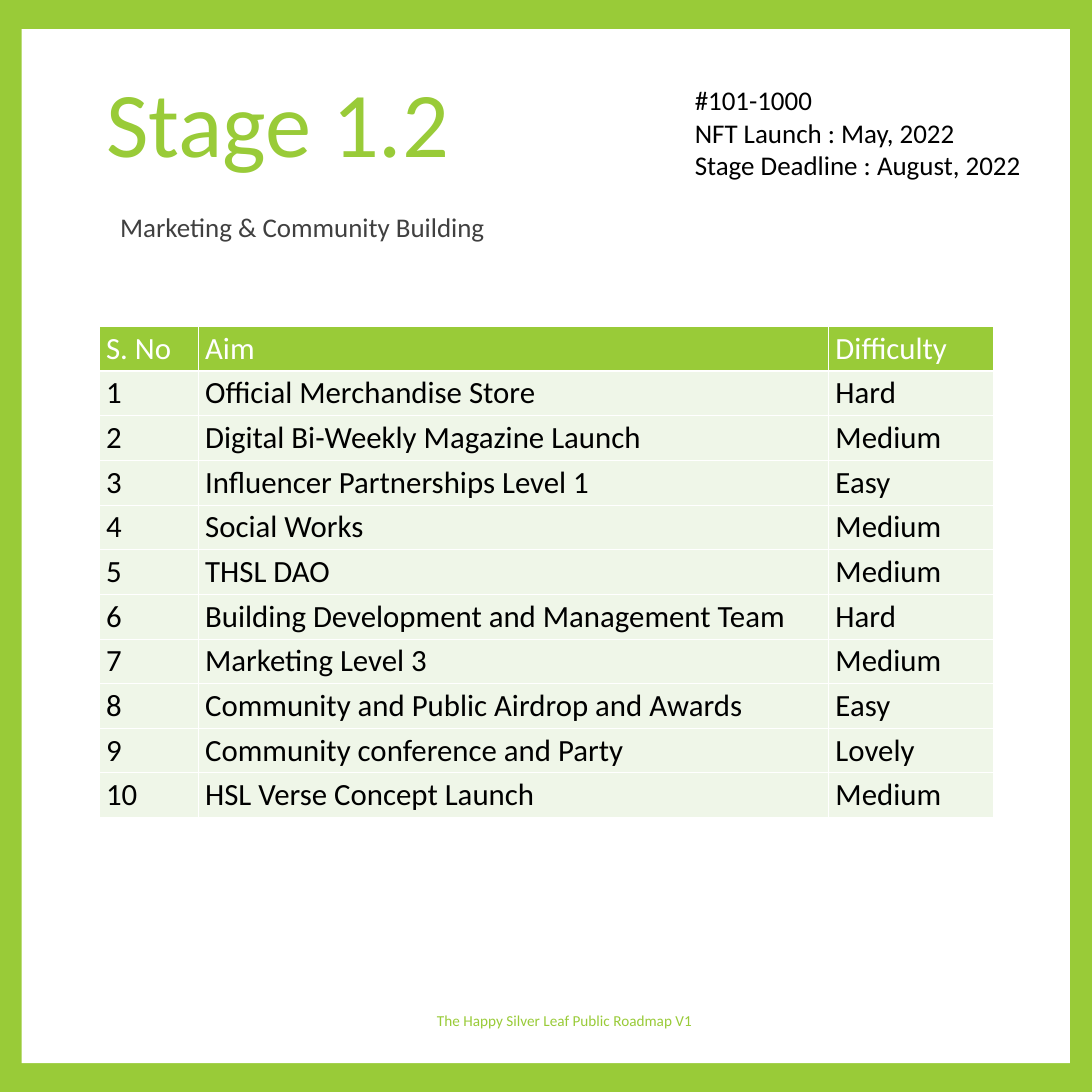
"""Build the Stage 1.2 roadmap slide with its table of aims."""
from dataclasses import dataclass

from lxml.etree import SubElement
from pptx import Presentation
from pptx.dml.color import RGBColor
from pptx.enum.shapes import MSO_SHAPE
from pptx.enum.text import MSO_ANCHOR as Anchor, MSO_AUTO_SIZE as AutoSize, PP_ALIGN as Align
from pptx.oxml.ns import qn
from pptx.util import Cm, Pt

GREEN, PALE, WHITE, BLACK, GREY = "99CB38", "EFF6E8", "FFFFFF", "000000", "404040"
LEFT = 3.63
ROW_HEIGHT = 1.6
COLUMN_WIDTHS = (3.63, 23.09, 6.05)
HEADER = ("S. No", "Aim", "Difficulty")


@dataclass(frozen=True)
class Aim:
    name: str
    difficulty: str


@dataclass(frozen=True)
class Caption:
    lines: tuple[str, ...]
    box: tuple[float, float, float, float]
    size: float
    color: str
    align: Align = Align.LEFT
    anchor: Anchor = Anchor.TOP
    fit: AutoSize = AutoSize.SHAPE_TO_FIT_TEXT
    spacing: float = 1.0


AIMS = (
    Aim("Official Merchandise Store", "Hard"),
    Aim("Digital Bi-Weekly Magazine Launch", "Medium"),
    Aim("Influencer Partnerships Level 1", "Easy"),
    Aim("Social Works", "Medium"),
    Aim("THSL DAO", "Medium"),
    Aim("Building Development and Management Team", "Hard"),
    Aim("Marketing Level 3", "Medium"),
    Aim("Community and Public Airdrop and Awards", "Easy"),
    Aim("Community conference and Party", "Lovely"),
    Aim("HSL Verse Concept Launch", "Medium"),
)

STAGE = Caption(("Stage 1.2",), (LEFT, 3.96, 27.43, 1.4), 96, GREEN,
                anchor=Anchor.MIDDLE, fit=AutoSize.NONE, spacing=0.9)
CAPTIONS = (
    Caption(("The Happy Silver Leaf Public Roadmap V1",), (12.95, 36.3, 15.47, 2.13), 15.8,
            GREEN, Align.CENTER, Anchor.MIDDLE, AutoSize.NONE),
    Caption(("#101-1000", "NFT Launch : May, 2022", "Stage Deadline : August, 2022"),
            (25.2, 2.95, 13.61, 3.84), 28, BLACK),
    Caption(("Marketing & Community Building",), (LEFT, 7.57, 14.88, 1.45), 28, GREY, Align.CENTER),
)


def paint(fill, color: str) -> None:
    fill.solid()
    fill.fore_color.rgb = RGBColor.from_string(color)


def set_font(font, size: float, color: str) -> None:
    for key, value in {"name": "Calibri", "size": Pt(size), "bold": False}.items():
        setattr(font, key, value)
    paint(font.fill, color)


def write(shape, caption: Caption) -> None:
    for side, length in zip(("left", "top", "width", "height"), caption.box):
        setattr(shape, side, Cm(length))
    frame = shape.text_frame
    frame.text = "\n".join(caption.lines)
    frame_format = {"word_wrap": True, "auto_size": caption.fit, "vertical_anchor": caption.anchor}
    for key, value in frame_format.items():
        setattr(frame, key, value)
    for paragraph in frame.paragraphs:
        paragraph.alignment = caption.align
        paragraph.line_spacing = caption.spacing
        set_font(paragraph.runs[0].font, caption.size, caption.color)


def add_borders(cell, bottom: float) -> None:
    properties = cell._tc.get_or_add_tcPr()
    for side, width in {"lnL": 1, "lnR": 1, "lnT": 1, "lnB": bottom}.items():
        line = SubElement(properties, qn(f"a:{side}"), w=str(Pt(width)))
        SubElement(SubElement(line, qn("a:solidFill")), qn("a:srgbClr"), val=WHITE)


def add_aims(slide) -> None:
    rows = [HEADER] + [(str(i), aim.name, aim.difficulty) for i, aim in enumerate(AIMS, 1)]
    table = slide.shapes.add_table(
        len(rows), len(HEADER), Cm(LEFT), Cm(11.96),
        Cm(sum(COLUMN_WIDTHS)), Cm(ROW_HEIGHT * len(rows))).table
    for column, width in zip(table.columns, COLUMN_WIDTHS):
        column.width = Cm(width)
    for r, texts in enumerate(rows):
        fill, color, bottom = (PALE, BLACK, 1) if r else (GREEN, WHITE, 3)
        for c, text in enumerate(texts):
            cell = table.cell(r, c)
            cell.text = text
            set_font(cell.text_frame.paragraphs[0].runs[0].font, 32, color)
            add_borders(cell, bottom)
            paint(cell.fill, fill)


def main() -> None:
    deck = Presentation()
    deck.slide_width = deck.slide_height = Cm(40)
    slide = deck.slides.add_slide(deck.slide_layouts[5])
    paint(slide.background.fill, GREEN)
    title = slide.shapes.title
    page = slide.shapes.add_shape(MSO_SHAPE.RECTANGLE, Cm(0.79), Cm(1.07), Cm(38.4), Cm(37.87))
    page.shadow.inherit = False
    paint(page.fill, WHITE)
    page.line.fill.background()
    title._element.addprevious(page._element)
    add_aims(slide)
    write(title, STAGE)
    for caption in CAPTIONS:
        write(slide.shapes.add_textbox(0, 0, 0, 0), caption)
    deck.save("out.pptx")


if __name__ == "__main__":
    main()
